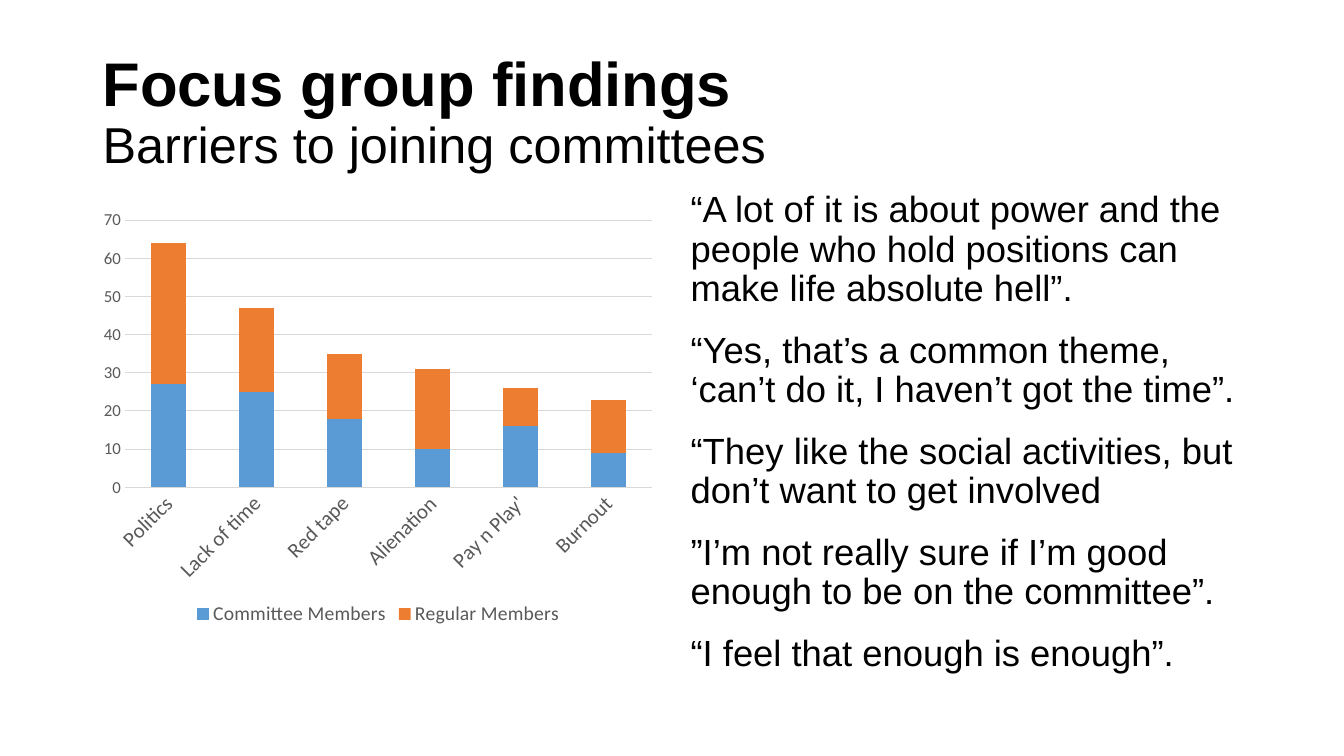
from dataclasses import dataclass

from lxml.etree import SubElement
from pptx import Presentation
from pptx.chart.data import CategoryChartData
from pptx.dml.color import RGBColor
from pptx.enum.chart import XL_CHART_TYPE, XL_LEGEND_POSITION, XL_TICK_MARK
from pptx.enum.text import MSO_ANCHOR, MSO_AUTO_SIZE, PP_ALIGN
from pptx.oxml.ns import qn
from pptx.util import Cm, Pt

BLACK = RGBColor(0x00, 0x00, 0x00)
GREY = RGBColor(0x59, 0x59, 0x59)
RULE = RGBColor(0xD9, 0xD9, 0xD9)
BLUE = RGBColor(0x5B, 0x9B, 0xD5)
ORANGE = RGBColor(0xED, 0x7D, 0x31)


@dataclass
class Box:
    left: float
    top: float
    width: float
    height: float

    def spans(self) -> tuple:
        return Cm(self.left), Cm(self.top), Cm(self.width), Cm(self.height)


@dataclass
class Group:
    name: str
    votes: tuple
    color: RGBColor


HEAD = Box(2.33, 1.02, 29.21, 3.68)
PLOT = Box(2.33, 5.08, 14.4, 10.8)
BODY = Box(17.15, 4.7, 14.4, 13.16)

CAUSES = ("Politics", "Lack of time", "Red tape", "Alienation", "Pay n Play'", "Burnout")
GROUPS = (
    Group("Committee Members", (27, 25, 18, 10, 16, 9), BLUE),
    Group("Regular Members", (37, 22, 17, 21, 10, 14), ORANGE),
)
QUOTES = (
    "“A lot of it is about power and the people who hold positions can make life absolute hell”.",
    "“Yes, that’s a common theme, ‘can’t do it, I haven’t got the time”.",
    "“They like the social activities, but don’t want to get involved",
    "”I’m not really sure if I’m good enough to be on the committee”.",
    "“I feel that enough is enough”.",
)


def style(font, size: float, color: RGBColor, face: str = "Calibri", bold: bool = False) -> None:
    font.name = face
    font.size = Pt(size)
    font.bold = bold
    font.color.rgb = color


def write(para, text: str, *, size: float, bold: bool = False,
          before: float = 0, after: float = 0) -> None:
    para.alignment = PP_ALIGN.LEFT
    para.line_spacing = 0.9
    para.space_before = Pt(before)
    para.space_after = Pt(after)
    run = para.add_run()
    run.text = text
    style(run.font, size, BLACK, "Arial", bold)


def place(shape, box: Box, anchor: MSO_ANCHOR):
    shape.left, shape.top, shape.width, shape.height = box.spans()
    frame = shape.text_frame
    frame.word_wrap = True
    frame.auto_size = MSO_AUTO_SIZE.NONE
    frame.vertical_anchor = anchor
    return frame


def plain(para) -> None:
    props = para._p.get_or_add_pPr()
    props.set("marL", "0")
    props.set("indent", "0")
    SubElement(props, qn("a:buNone"))


def draw_head(slide) -> None:
    para = place(slide.shapes.title, HEAD, MSO_ANCHOR.MIDDLE).paragraphs[0]
    write(para, "Focus group findings", size=44, bold=True)
    para.add_line_break()
    write(para, "Barriers to joining committees", size=36)


def draw_body(slide) -> None:
    frame = place(slide.placeholders[1], BODY, MSO_ANCHOR.TOP)
    for rank, quote in enumerate(QUOTES):
        para = frame.add_paragraph() if rank else frame.paragraphs[0]
        plain(para)
        write(para, quote, size=26, before=10 if rank else 0, after=6)


def draw_chart(slide) -> None:
    data = CategoryChartData()
    data.categories = CAUSES
    for group in GROUPS:
        data.add_series(group.name, group.votes)
    chart = slide.shapes.add_chart(XL_CHART_TYPE.COLUMN_STACKED, *PLOT.spans(), data).chart
    style(chart.font, 10, BLACK)
    chart.has_title = False

    chart.has_legend = True
    chart.legend.position = XL_LEGEND_POSITION.BOTTOM
    chart.legend.include_in_layout = False
    style(chart.legend.font, 14, GREY)

    plot = chart.plots[0]
    plot.vary_by_categories = False
    plot.gap_width = 150
    plot.overlap = 100
    for series, group in zip(plot.series, GROUPS):
        series.format.fill.solid()
        series.format.fill.fore_color.rgb = group.color

    causes, votes = chart.category_axis, chart.value_axis
    for axis, size in ((causes, 15), (votes, 12)):
        axis.major_tick_mark = axis.minor_tick_mark = XL_TICK_MARK.NONE
        style(axis.tick_labels.font, size, GREY)
    causes.has_major_gridlines = False
    votes.has_major_gridlines = True
    for line in (causes.format.line, votes.major_gridlines.format.line):
        line.color.rgb = RULE
        line.width = Pt(0.75)
    votes.format.line.fill.background()
    votes.minimum_scale, votes.maximum_scale, votes.major_unit = 0, 70, 10
    causes._element.find(qn("c:txPr")).find(qn("a:bodyPr")).set("rot", "-2700000")


def main() -> None:
    deck = Presentation()
    deck.slide_width, deck.slide_height = Cm(33.87), Cm(19.05)
    slide = deck.slides.add_slide(deck.slide_layouts[1])
    draw_head(slide)
    draw_body(slide)
    draw_chart(slide)
    deck.save("out.pptx")


if __name__ == "__main__":
    main()
